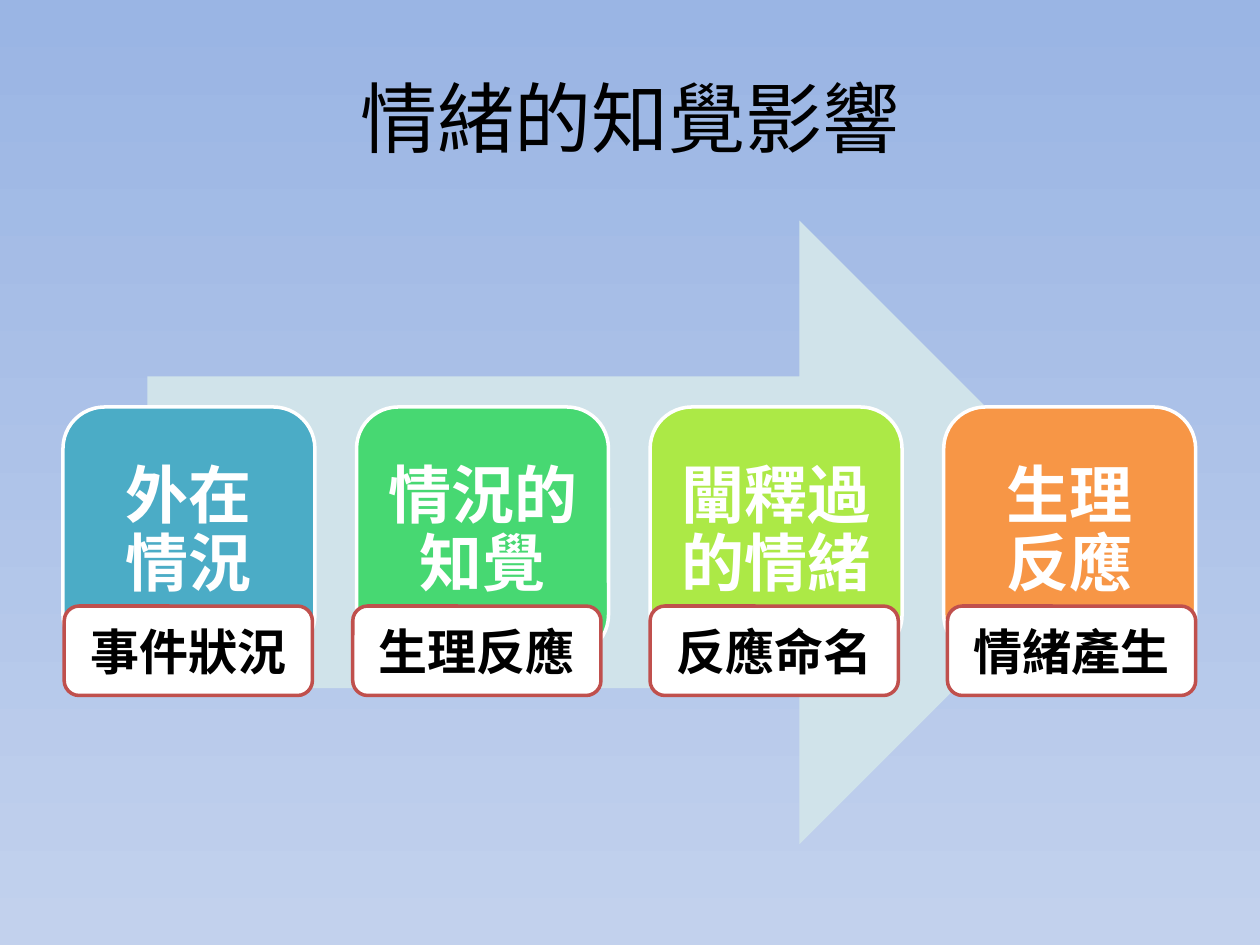
from dataclasses import dataclass

import pptx
import pptx.dml.color
import pptx.enum.shapes
import pptx.enum.text
import pptx.oxml
import pptx.oxml.ns
import pptx.oxml.xmlchemy
import pptx.util

Inches = pptx.util.Inches
Pt = pptx.util.Pt
MSO_SHAPE = pptx.enum.shapes.MSO_SHAPE

FONT = "Noto Sans CJK SC"
CARD_LEFT, CARD_PITCH = 0.5, 2.33


@dataclass
class Stage:
    heading: str
    color: str
    label: str
    label_left: float


STAGES = [
    Stage("外在\n情況", "4BACC6", "事件狀況", 0.51),
    Stage("情況的知覺", "47D872", "生理反應", 2.8),
    Stage("闡釋過的情緒", "ACE946", "反應命名", 5.16),
    Stage("生理\n反應", "F79646", "情緒產生", 7.52),
]


def rgb(value: str) -> pptx.dml.color.RGBColor:
    return pptx.dml.color.RGBColor.from_string(value)


def write(shape, text: str, *, size: float, color: str = "000000", bold: bool = False,
          spacing: float = 1.0, inset: float = 0.1) -> None:
    frame = shape.text_frame
    frame.word_wrap = True
    frame.vertical_anchor = pptx.enum.text.MSO_ANCHOR.MIDDLE
    frame.margin_left = frame.margin_right = Inches(inset)
    paragraph = frame.paragraphs[0]
    paragraph.text = text
    paragraph.alignment = pptx.enum.text.PP_ALIGN.CENTER
    paragraph.line_spacing = spacing
    for run in paragraph.runs:
        run.font.name = FONT
        run.font.size = Pt(size)
        run.font.bold = bold
        run.font.color.rgb = rgb(color)
        east_asian = pptx.oxml.xmlchemy.OxmlElement("a:ea")
        east_asian.set("typeface", FONT)
        run.font._element.append(east_asian)


def add_block(slide, kind, left: float, top: float, width: float, height: float,
              *, fill: str, line: str | None = None):
    block = slide.shapes.add_shape(kind, Inches(left), Inches(top), Inches(width), Inches(height))
    block.shadow.inherit = False
    block.fill.solid()
    block.fill.fore_color.rgb = rgb(fill)
    if line is None:
        block.line.fill.background()
    else:
        block.line.color.rgb = rgb(line)
        block.line.width = Pt(2)
    return block


def paint_background(slide, top_color: str, bottom_color: str) -> None:
    fill = slide.background.fill
    fill.gradient()
    fill.gradient_angle = 270
    for stop, color, position in zip(fill.gradient_stops, (top_color, bottom_color), (0, 1)):
        stop.color.rgb = rgb(color)
        stop.position = position


def main() -> None:
    presentation = pptx.Presentation()
    presentation.slide_width = Inches(10)
    presentation.slide_height = Inches(7.5)
    slide = presentation.slides.add_slide(presentation.slide_layouts[6])
    paint_background(slide, "9AB5E4", "C2D1ED")

    title = slide.shapes.add_textbox(Inches(0.5), Inches(0.3), Inches(9), Inches(1.25))
    write(title, "情緒的知覺影響", size=44)

    add_block(slide, MSO_SHAPE.RIGHT_ARROW, 1.17, 1.75, 7.65, 4.95, fill="D0E3EA")
    for index, stage in enumerate(STAGES):
        card = add_block(slide, MSO_SHAPE.ROUNDED_RECTANGLE, CARD_LEFT + index * CARD_PITCH,
                         3.23, 2, 1.98, fill=stage.color, line="FFFFFF")
        write(card, stage.heading, size=36, color="FFFFFF", bold=True, spacing=0.9, inset=0.14)
    for stage in STAGES:
        label = add_block(slide, MSO_SHAPE.ROUNDED_RECTANGLE, stage.label_left,
                          4.81, 1.97, 0.71, fill="FFFFFF", line="C0504D")
        write(label, stage.label, size=28, bold=True)

    presentation.save("out.pptx")


if __name__ == "__main__":
    main()
